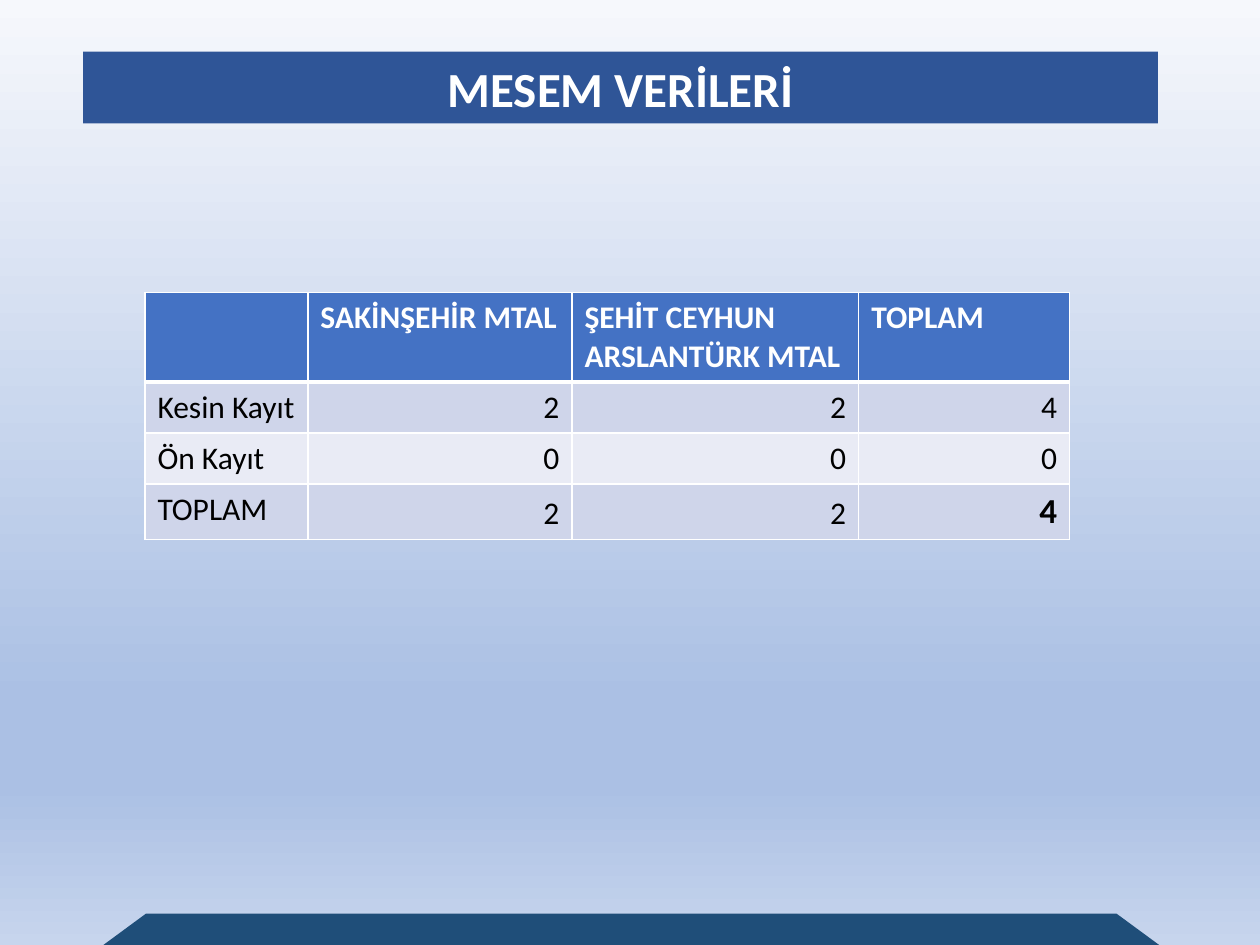
from lxml import etree
from pptx import Presentation
from pptx.dml.color import RGBColor
from pptx.enum import shapes, text
from pptx.oxml import ns
from pptx.util import Inches, Pt

WIDTH, HEIGHT = Inches(10), Inches(7.5)
FONT = "Calibri"
COLOURS = {
    "banner": "2F5597", "footer": "1F4E79", "header": "4472C4",
    "odd": "CFD5EA", "even": "E9EBF5", "white": "FFFFFF", "black": "000000",
}
BACKGROUND_STOPS = [(0, "F6F8FC"), (74, "ABC0E4"), (83, "ABC0E4"), (100, "C7D5ED")]

ROWS = [
    ["", "SAKİNŞEHİR MTAL", "ŞEHİT CEYHUN ARSLANTÜRK MTAL", "TOPLAM"],
    ["Kesin Kayıt", "2", "2", "4"],
    ["Ön Kayıt", "0", "0", "0"],
    ["TOPLAM", "2", "2", "4"],
]
COLUMN_WEIGHTS = [1.29, 2.09, 2.27, 1.67]
ROW_WEIGHTS = [0.69, 0.4, 0.4, 0.43]


def colour(name):
    return RGBColor.from_string(COLOURS[name])


def share_box(left, top, width, height):
    """Turn shares of the slide's size into lengths."""
    return (int(left * WIDTH), int(top * HEIGHT),
            int(width * WIDTH), int(height * HEIGHT))


def style_text(frame, size, name, bold, alignment):
    para = frame.paragraphs[0]
    para.alignment = alignment
    for span in para.runs:
        span.font.name = FONT
        span.font.size = Pt(size)
        span.font.bold = bold
        span.font.color.rgb = colour(name)


def add_block(page, kind, box, fill):
    block = page.shapes.add_shape(kind, *box)
    block.shadow.inherit = False
    block.fill.solid()
    block.fill.fore_color.rgb = colour(fill)
    block.line.fill.background()
    return block


def add_background(page):
    fill = page.background.fill
    fill.gradient()
    fill.gradient_angle = 270
    stops = page.background._cSld.find(".//" + ns.qn("a:gsLst"))
    for stop in list(stops):
        stops.remove(stop)
    for position, value in BACKGROUND_STOPS:
        stop = etree.SubElement(stops, ns.qn("a:gs"), pos=str(position * 1000))
        etree.SubElement(stop, ns.qn("a:srgbClr"), val=value)


def add_footer(page, box):
    footer = add_block(page, shapes.MSO_SHAPE.TRAPEZOID, box, "footer")
    footer.adjustments[0] = 1.36


def add_banner(page, box):
    banner = add_block(page, shapes.MSO_SHAPE.RECTANGLE, box, "banner")
    frame = banner.text_frame
    frame.text = "MESEM VERİLERİ"
    frame.vertical_anchor = text.MSO_ANCHOR.MIDDLE
    style_text(frame, 28, "white", True, text.PP_ALIGN.CENTER)


def set_borders(cell, top, bottom):
    properties = cell._tc.get_or_add_tcPr()
    for side, width in (("L", 1), ("R", 1), ("T", top), ("B", bottom)):
        line = etree.SubElement(properties, ns.qn("a:ln" + side), w=str(Pt(width)))
        fill = etree.SubElement(line, ns.qn("a:solidFill"))
        etree.SubElement(fill, ns.qn("a:srgbClr"), val=COLOURS["white"])


def add_records(page, box):
    left, top, width, height = box
    table = page.shapes.add_table(len(ROWS), len(ROWS[0]), *box).table
    for column, weight in zip(table.columns, COLUMN_WEIGHTS):
        column.width = int(width * weight / sum(COLUMN_WEIGHTS))
    for row, weight in zip(table.rows, ROW_WEIGHTS):
        row.height = int(height * weight / sum(ROW_WEIGHTS))

    for r, values in enumerate(ROWS):
        header = r == 0
        band = "header" if header else ("odd" if r % 2 else "even")
        for c, value in enumerate(values):
            cell = table.cell(r, c)
            # A thicker rule separates the header from the body
            set_borders(cell, 3 if r == 1 else 1, 3 if header else 1)
            cell.fill.solid()
            cell.fill.fore_color.rgb = colour(band)
            cell.text_frame.text = value
            number = not header and c > 0
            grand_total = r == len(ROWS) - 1 and c == len(values) - 1
            if number:
                cell.vertical_anchor = text.MSO_ANCHOR.BOTTOM
            style_text(cell.text_frame, 20 if grand_total else 18,
                       "white" if header else "black", header or grand_total,
                       text.PP_ALIGN.RIGHT if number else text.PP_ALIGN.LEFT)


def main():
    deck = Presentation()
    deck.slide_width, deck.slide_height = WIDTH, HEIGHT
    page = deck.slides.add_slide(deck.slide_layouts[6])
    add_background(page)
    add_footer(page, share_box(0.082, 29 / 30, 0.838, 1 / 30))
    add_banner(page, share_box(0.066, 0.41 / 7.5, 0.853, 0.57 / 7.5))
    add_records(page, share_box(0.115, 2.32 / 7.5, 0.734, 1.93 / 7.5))
    deck.save("out.pptx")


if __name__ == "__main__":
    main()
